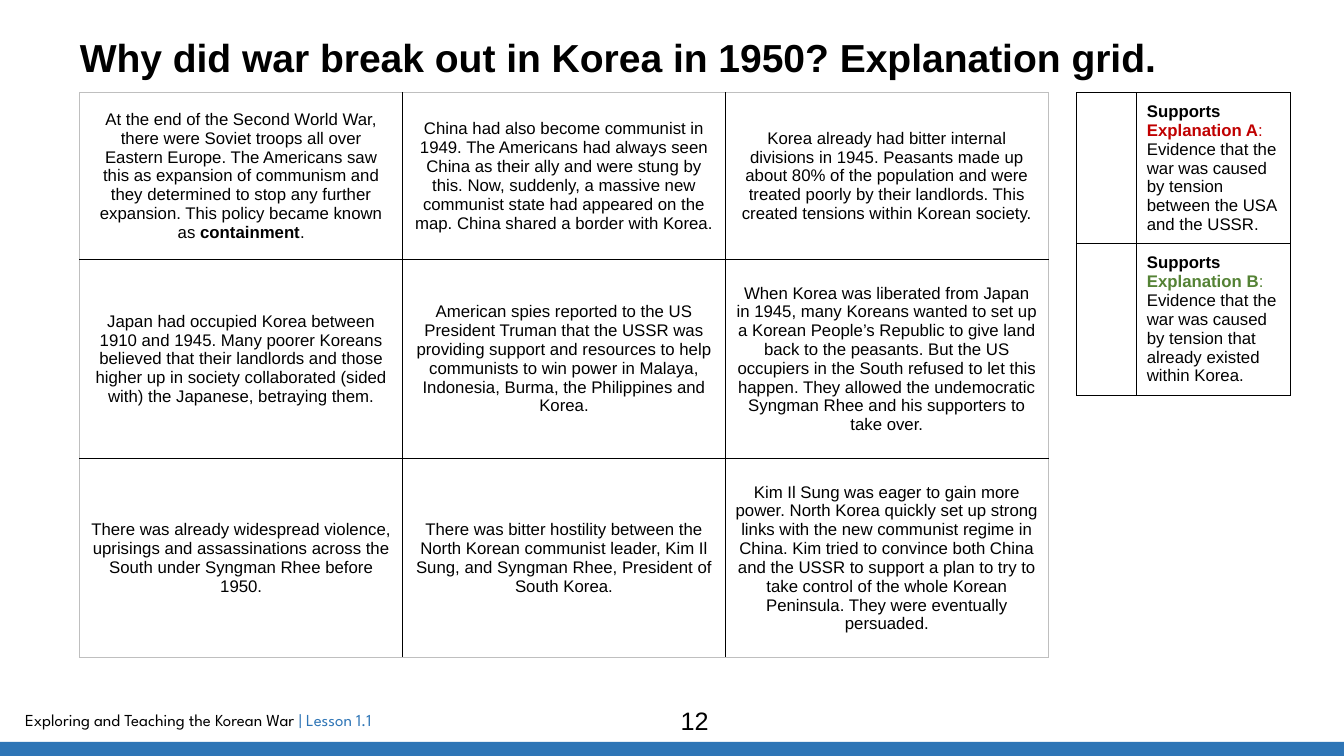
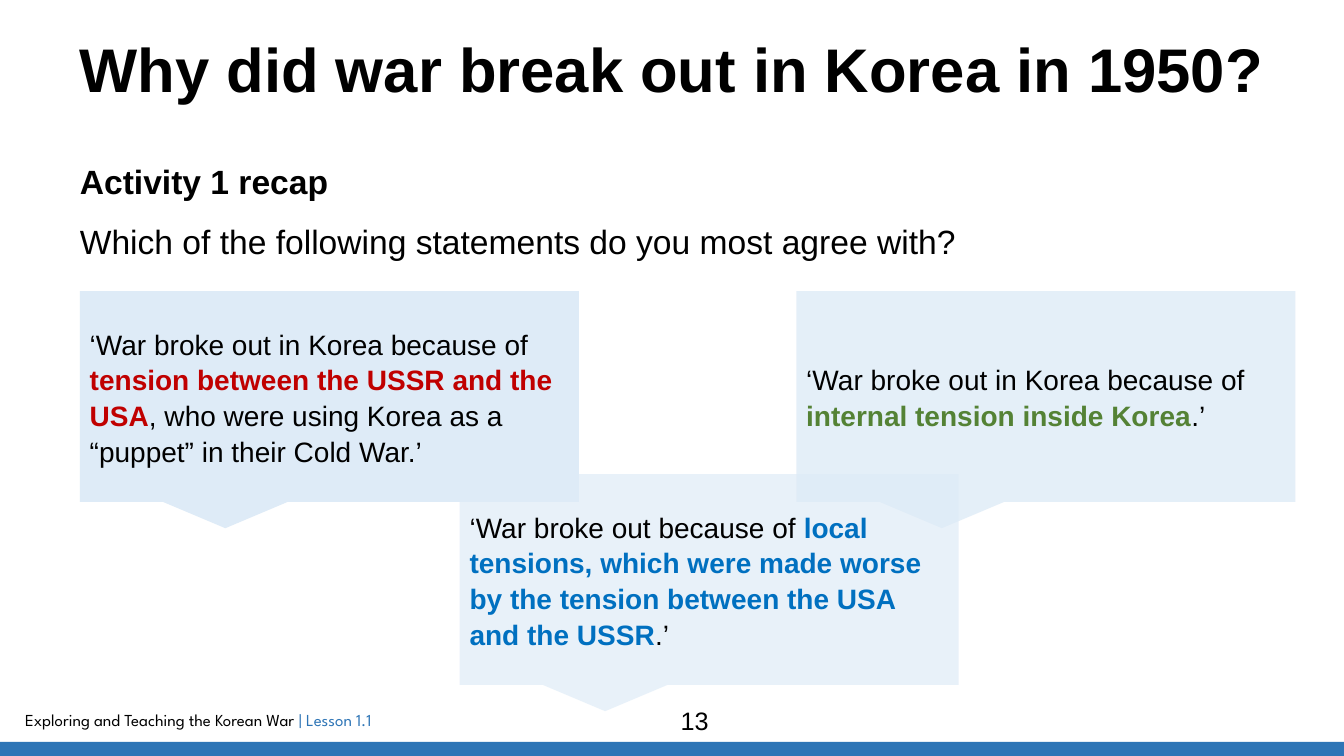
from lxml import etree
from pptx import Presentation
from pptx.dml.color import RGBColor
from pptx.enum.shapes import MSO_SHAPE
from pptx.enum.text import MSO_ANCHOR, PP_ALIGN
from pptx.oxml.ns import qn
from pptx.util import Pt

RECT = MSO_SHAPE.RECTANGLE
CALLOUT = MSO_SHAPE.RECTANGULAR_CALLOUT
TOP = MSO_ANCHOR.TOP
MIDDLE = MSO_ANCHOR.MIDDLE
LEFT = PP_ALIGN.LEFT
CENTER = PP_ALIGN.CENTER

BLACK = RGBColor(0x00, 0x00, 0x00)
WHITE = RGBColor(0xFF, 0xFF, 0xFF)
GREY = RGBColor(0xBF, 0xBF, 0xBF)
NAVY = RGBColor(0x2E, 0x75, 0xB6)
PALE = RGBColor(0xDE, 0xEB, 0xF7)
RED = RGBColor(0xC0, 0x00, 0x00)
GREEN = RGBColor(0x54, 0x82, 0x35)
BLUE = RGBColor(0x00, 0x70, 0xC0)

SANS = "Arial"
BRAND = "League Spartan"
EDGE = 57
GRID_TOP = 66.2

GRID = [
    [
        [
            ("At the end of the Second World War, there were Soviet troops all over "
             "Eastern Europe. The Americans saw this as expansion of communism and they "
             "determined to stop any further expansion. This policy became known as ",),
            ("containment", BLACK, True),
            (".",),
        ],
        [("China had also become communist in 1949. The Americans had always seen China "
          "as their ally and were stung by this. Now, suddenly, a massive new communist "
          "state had appeared on the map. China shared a border with Korea.",)],
        [("Korea already had bitter internal divisions in 1945. Peasants made up about "
          "80% of the population and were treated poorly by their landlords. This "
          "created tensions within Korean society.",)],
    ],
    [
        [("Japan had occupied Korea between 1910 and 1945. Many poorer Koreans believed "
          "that their landlords and those higher up in society collaborated (sided "
          "with) the Japanese, betraying them.",)],
        [("American spies reported to the US President Truman that the USSR was "
          "providing support and resources to help communists to win power in Malaya, "
          "Indonesia, Burma, the Philippines and Korea.",)],
        [("When Korea was liberated from Japan in 1945, many Koreans wanted to set up a "
          "Korean People’s Republic to give land back to the peasants. But the US "
          "occupiers in the South refused to let this happen. They allowed the "
          "undemocratic Syngman Rhee and his supporters to take over.",)],
    ],
    [
        [("There was already widespread violence, uprisings and assassinations across "
          "the South under Syngman Rhee before 1950.",)],
        [("There was bitter hostility between the North Korean communist leader, Kim Il "
          "Sung, and Syngman Rhee, President of South Korea.",)],
        [("Kim Il Sung was eager to gain more power. North Korea quickly set up strong "
          "links with the new communist regime in China. Kim tried to convince both "
          "China and the USSR to support a plan to try to take control of the whole "
          "Korean Peninsula. They were eventually persuaded.",)],
    ],
]

KEYS = [
    ("Explanation A", RED,
     "Evidence that the war was caused by tension between the USA and the USSR."),
    ("Explanation B", GREEN,
     "Evidence that the war was caused by tension that already existed within Korea."),
]

CLAIMS = [
    (EDGE, 208, 100, [
        ("‘War broke out in Korea because of ",),
        ("tension between the USSR and the USA", RED, True),
        (", who were using Korea as a “puppet” in their Cold War.’",),
    ]),
    (568.8, 208, 79, [
        ("‘War broke out in Korea because of ",),
        ("internal tension inside Korea", GREEN, True),
        (".’",),
    ]),
    (328.3, 338.7, 67, [
        ("‘War broke out because of ",),
        ("local tensions, which were made worse by the tension between the USA "
         "and the USSR", BLUE, True),
        (".’",),
    ]),
]


def add_run(para, size, name, text, color=BLACK, bold=False):
    run = para.add_run()
    run.text = text
    look = {"size": Pt(size), "name": name, "bold": bold}
    for key, value in look.items():
        setattr(run.font, key, value)
    run.font.color.rgb = color


def write(frame, paras, size, name=SANS, **form):
    frame.word_wrap = True
    for index, runs in enumerate(paras):
        para = frame.add_paragraph() if index else frame.paragraphs[0]
        for key, value in form.items():
            setattr(para, key, value)
        if index:
            para.space_before = Pt(6)
        for run in runs:
            add_run(para, size, name, *run)


def add_text(slide, box, paras, size, flush=False, **form):
    frame = slide.shapes.add_textbox(*map(Pt, box)).text_frame
    frame.vertical_anchor = TOP
    if flush:
        for side in ("left", "top", "right", "bottom"):
            setattr(frame, f"margin_{side}", 0)
    write(frame, paras, size, **form)


def add_box(slide, kind, box, color, alpha=100):
    shape = slide.shapes.add_shape(kind, *map(Pt, box))
    shape.shadow.inherit = False
    shape.fill.solid()
    shape.fill.fore_color.rgb = color
    shape.line.fill.background()
    if alpha < 100:
        tone = shape.fill._xPr.find(".//" + qn("a:srgbClr"))
        etree.SubElement(tone, qn("a:alpha"), val=str(alpha * 1000))
    return shape


def add_title(slide, box, text, size):
    add_text(slide, box, [[(text, BLACK, True)]], size, flush=True, line_spacing=0.9)


def add_claim(slide, left, top, alpha, runs):
    shape = add_box(slide, CALLOUT, (left, top, 356.4, 150.5), PALE, alpha)
    shape.text_frame.vertical_anchor = MIDDLE
    write(shape.text_frame, [runs], 20, alignment=LEFT, line_spacing=1.07)


def set_edges(cell, colors):
    props = cell._tc.get_or_add_tcPr()
    for index, (side, color) in enumerate(colors.items()):
        line = etree.Element(qn(f"a:ln{side}"), w=str(Pt(1)))
        fill = etree.SubElement(line, qn("a:solidFill"))
        etree.SubElement(fill, qn("a:srgbClr"), val=str(color))
        props.insert(index, line)


def add_grid(slide, left, top, cols, rows, cells, align, rim):
    box = (left, top, sum(cols), sum(rows))
    table = slide.shapes.add_table(len(rows), len(cols), *map(Pt, box)).table
    table.first_row = table.horz_banding = False
    for col, width in zip(table.columns, cols):
        col.width = Pt(width)
    for row, height in zip(table.rows, rows):
        row.height = Pt(height)
    for r, line in enumerate(cells):
        for c, runs in enumerate(line):
            cell = table.cell(r, c)
            cell.fill.solid()
            cell.fill.fore_color.rgb = WHITE
            cell.vertical_anchor = MIDDLE
            outer = {"L": c == 0, "R": c == len(cols) - 1,
                     "T": r == 0, "B": r == len(rows) - 1}
            set_edges(cell, {s: rim if out else BLACK for s, out in outer.items()})
            if runs:
                write(cell.text_frame, [runs], 12, alignment=align)


def add_page(deck, number):
    slide = deck.slides.add_slide(deck.slide_layouts[6])
    add_text(slide, (10.8, 503.3, 563, 21.6),
             [[("Exploring and Teaching the Korean War ",), ("| Lesson 1.1", NAVY)]],
             12, name=BRAND)
    add_box(slide, RECT, (0, 530, 960, 10), NAVY)
    add_text(slide, (320.4, 500.4, 351.4, 28.8), [[(str(number),)]], 18,
             alignment=CENTER)
    return slide


def add_reasons(deck):
    slide = add_page(deck, 12)
    add_title(slide, (EDGE, 28, 828, 41),
              "Why did war break out in Korea in 1950? Explanation grid.", 27.9)
    add_grid(slide, EDGE, GRID_TOP, [230.6] * 3, [119.2, 142.2, 142.2],
             GRID, CENTER, GREY)
    keys = [
        [None, [("Supports ", BLACK, True), (name, color, True), (": ", color), (text,)]]
        for name, color, text in KEYS
    ]
    add_grid(slide, 769, GRID_TOP, [43, 110], [101.3] * 2, keys, LEFT, BLACK)


def add_recap(deck):
    slide = add_page(deck, 13)
    add_title(slide, (EDGE, 28, 888.5, 104.4),
              "Why did war break out in Korea in 1950?", 44)
    add_text(slide, (EDGE, 113, 680, 83.5),
             [[("Activity 1 recap", BLACK, True)],
              [("Which of the following statements do you most agree with?",)]],
             24, flush=True, line_spacing=1.07, space_after=Pt(6))
    for claim in CLAIMS:
        add_claim(slide, *claim)


def main():
    deck = Presentation()
    deck.slide_width, deck.slide_height = Pt(960), Pt(540)
    add_reasons(deck)
    add_recap(deck)
    deck.save("out.pptx")


if __name__ == "__main__":
    main()
